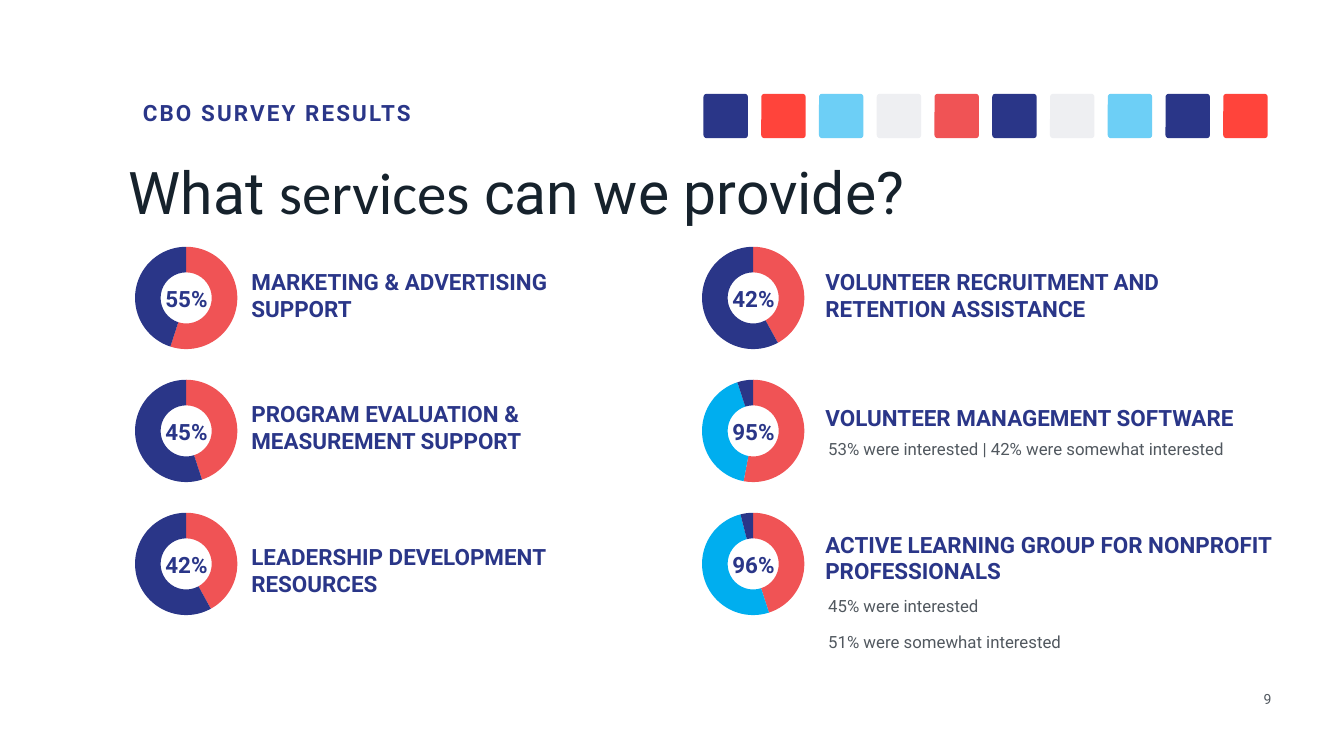
from dataclasses import dataclass

from lxml import etree
from pptx import Presentation
from pptx.chart import data as cd
from pptx.dml.color import RGBColor
from pptx.enum import chart, shapes, text
from pptx.oxml import ns
from pptx.util import Pt


@dataclass(frozen=True)
class Theme:
    navy: str = "2A3688"
    coral: str = "F05355"
    red: str = "FF443B"
    sky: str = "6DCFF6"
    cyan: str = "00AEEF"
    pale: str = "EEEFF2"
    ink: str = "16222C"
    gray: str = "51585F"
    chart_text: str = "FEFFFF"
    font: str = "Roboto"
    accent_font: str = "Calibri"
    chart_font: str = "Arial"
    title: int = 84
    heading: int = 32
    detail: int = 24
    number: int = 20
    chart_size: int = 10


T = Theme()
CHART_W, CHART_H = 170, 165
ROW_TOP, ROW_STEP = 344, 190
SQUARE, SQUARE_STEP = 63.4, 82.5


@dataclass(frozen=True)
class Service:
    label: str
    values: tuple
    label_top: float
    label_width: float
    detail: str = ""
    detail_top: float = 0


LEFT = [
    Service("MARKETING & ADVERTISING SUPPORT", (55, 45), 380, 538),
    Service("PROGRAM EVALUATION & MEASUREMENT SUPPORT", (45, 55), 569, 538),
    Service("LEADERSHIP DEVELOPMENT RESOURCES", (42, 58), 773, 538),
]
RIGHT = [
    Service("VOLUNTEER RECRUITMENT AND RETENTION ASSISTANCE", (42, 58), 380, 599),
    Service("VOLUNTEER MANAGEMENT SOFTWARE", (53, 42, 5), 574, 670,
            "53% were interested | 42% were somewhat interested", 600),
    Service("ACTIVE LEARNING GROUP FOR NONPROFIT PROFESSIONALS", (45, 51, 4), 755, 670,
            "45% were interested\n51% were somewhat interested", 824),
]


def style(font, size, color, name=T.font, bold=False):
    font.size, font.name, font.bold = Pt(size), name, bold
    font.color.rgb = RGBColor.from_string(color)


def add_text(s, content, x, y, w, h, size, color, bold=False, align=None, inset=(3, 3)):
    tf = s.shapes.add_textbox(Pt(x), Pt(y), Pt(w), Pt(h)).text_frame
    tf.word_wrap = True
    tf.margin_left = tf.margin_right = Pt(inset[0])
    tf.margin_top = tf.margin_bottom = Pt(inset[1])
    p = tf.paragraphs[0]
    p.text = content
    p.alignment = align
    style(p.font, size, color, bold=bold)
    return tf


def add_heading(s, content, x, y, w, h=63, align=None):
    return add_text(s, content, x, y, w, h, T.heading, T.navy, True, align)


def add_title(s):
    tf = add_text(s, "", 181, 220, 1520, 124, T.title, T.ink)
    p = tf.paragraphs[0]
    for content, name in (("What ", T.font), ("services", T.accent_font),
                          (" can we provide?", T.font)):
        r = p.add_run()
        r.text = content
        r.font.name = name


def add_kicker(s):
    tf = add_heading(s, "CBO SURVEY RESULTS", 201, 138, 441, 45)
    tf.vertical_anchor = text.MSO_ANCHOR.MIDDLE
    for r in tf.paragraphs[0].runs:
        r._r.get_or_add_rPr().set("spc", "300")


def add_squares(s):
    colors = (T.navy, T.red, T.sky, T.pale, T.coral,
              T.navy, T.pale, T.sky, T.navy, T.red)
    for i, color in enumerate(colors):
        sp = s.shapes.add_shape(shapes.MSO_SHAPE.ROUNDED_RECTANGLE,
                                Pt(1005 + i * SQUARE_STEP), Pt(134), Pt(SQUARE), Pt(SQUARE))
        sp.adjustments[0] = 0.07
        sp.shadow.inherit = False
        sp.fill.solid()
        sp.fill.fore_color.rgb = RGBColor.from_string(color)
        sp.line.fill.background()


def set_plot_layout(c, x, y, w, h):
    area = c._chartSpace.chart.plotArea
    for old in area.findall(ns.qn("c:layout")):
        area.remove(old)
    layout = etree.Element(ns.qn("c:layout"))
    manual = etree.SubElement(layout, ns.qn("c:manualLayout"))
    for tag, val in (("layoutTarget", "inner"), ("xMode", "edge"), ("yMode", "edge"),
                     ("x", x), ("y", y), ("w", w), ("h", h)):
        etree.SubElement(manual, ns.qn(f"c:{tag}")).set("val", str(val))
    area.insert(0, layout)


def add_doughnut(s, values, x, y):
    data = cd.CategoryChartData()
    data.categories = [str(i + 1) for i in range(len(values))]
    data.add_series("Series 1", values)
    c = s.shapes.add_chart(chart.XL_CHART_TYPE.DOUGHNUT, Pt(x), Pt(y),
                           Pt(CHART_W), Pt(CHART_H), data).chart
    c.has_legend = c.has_title = False
    style(c.font, T.chart_size, T.chart_text, T.chart_font)
    plot = c.plots[0]
    plot.vary_by_categories = False
    plot._element.find(ns.qn("c:holeSize")).set("val", "72")
    colors = (T.coral, T.navy) if len(values) == 2 else (T.coral, T.cyan, T.navy)
    for i, color in enumerate(colors):
        fmt = plot.series[0].points[i].format
        fmt.fill.solid()
        fmt.fill.fore_color.rgb = RGBColor.from_string(color)
        fmt.line.fill.background()
    set_plot_layout(c, 0.07, 0.05, 0.86, 0.89)


def add_service(s, item, x, y, label_x):
    add_doughnut(s, item.values, x, y)
    share = sum(item.values[:-1])
    add_heading(s, f"{share}%", x + 35, y + 60.5, 101, align=text.PP_ALIGN.CENTER)
    add_heading(s, item.label, label_x, item.label_top, item.label_width)
    if item.detail:
        lines = item.detail.count("\n") + 1
        tf = add_text(s, item.detail, label_x, item.detail_top, 703, 52.5 * lines,
                      T.detail, T.gray, inset=(7.2, 3.6))
        tf.paragraphs[0].line_spacing = 1.8


def main():
    prs = Presentation()
    prs.slide_width, prs.slide_height = Pt(1920), Pt(1080)
    s = prs.slides.add_slide(prs.slide_layouts[6])
    add_kicker(s)
    add_squares(s)
    add_title(s)
    for items, x, label_x in ((LEFT, 181, 356), (RIGHT, 991, 1176)):
        for i, item in enumerate(items):
            add_service(s, item, x, ROW_TOP + i * ROW_STEP, label_x)
    add_text(s, "9", 1775.5, 983.5, 70.5, 30, T.number, T.gray,
             align=text.PP_ALIGN.CENTER)
    prs.save("out.pptx")


if __name__ == "__main__":
    main()
